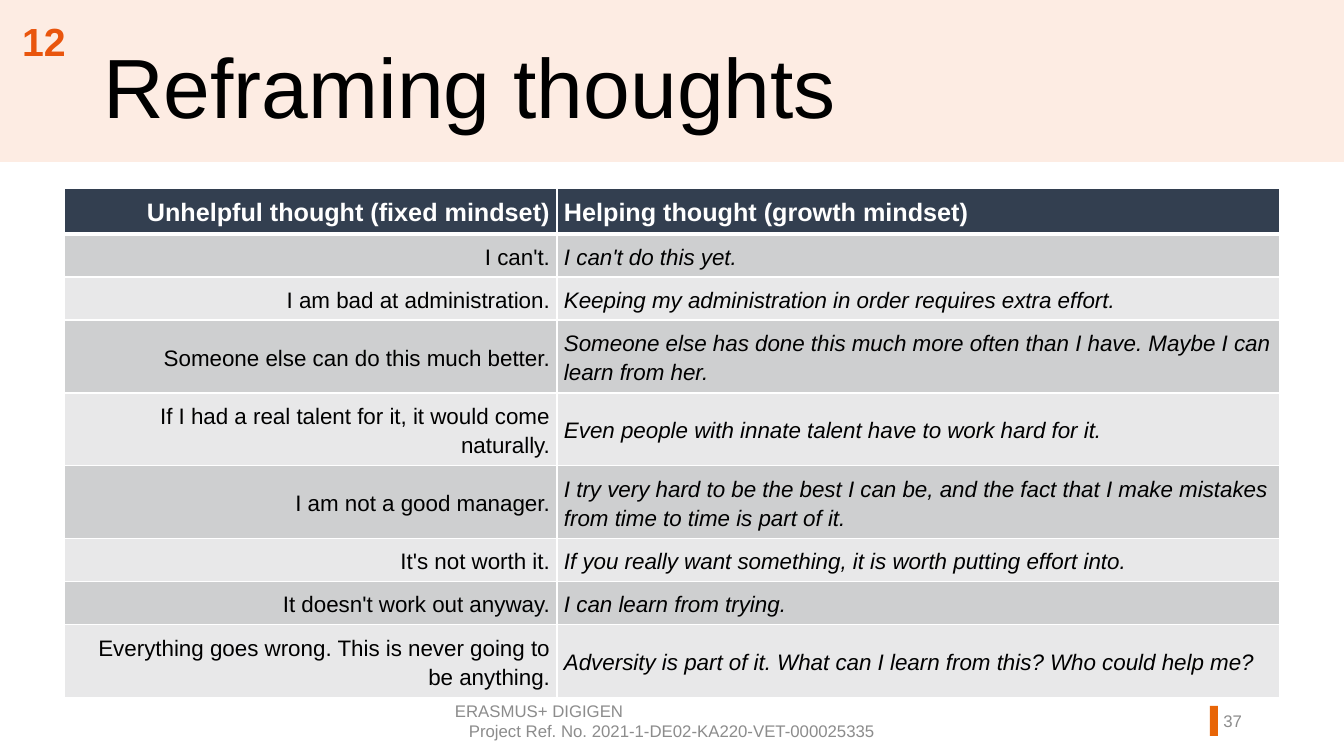
from dataclasses import dataclass

from lxml.etree import SubElement
from pptx import Presentation
from pptx.dml.color import RGBColor
from pptx.enum.shapes import MSO_SHAPE
from pptx.enum.text import MSO_ANCHOR as Anchor, MSO_AUTO_SIZE as AutoSize, PP_ALIGN as Align
from pptx.oxml.ns import qn
from pptx.slide import Slide
from pptx.table import _Cell as Cell
from pptx.text.text import TextFrame, _Paragraph as Paragraph
from pptx.util import Emu, Pt


@dataclass(frozen=True)
class Theme:
    font: str = "Arial"
    band: str = "FDECE3"
    accent: str = "E86507"
    chapter: str = "E9550D"
    header: str = "333F50"
    dark_row: str = "CECFD0"
    light_row: str = "E8E8E9"
    white: str = "FFFFFF"
    black: str = "000000"
    muted: str = "8C8C8C"
    title_size: int = 60
    chapter_size: int = 28
    header_size: int = 18
    body_size: int = 16
    footer_size: int = 12


@dataclass(frozen=True)
class Area:
    left: int
    top: int
    width: int
    height: int

    def emu(self) -> tuple[Emu, Emu, Emu, Emu]:
        return px(self.left), px(self.top), px(self.width), px(self.height)


@dataclass(frozen=True)
class Style:
    size: int
    color: str
    bold: bool = False
    italic: bool = False


@dataclass(frozen=True)
class Bar:
    area: Area
    color: str


@dataclass(frozen=True)
class Label:
    area: Area
    lines: tuple[str, ...]
    aligns: tuple[Align, ...]
    style: Style
    anchor: Anchor = Anchor.MIDDLE


@dataclass(frozen=True)
class Reframe:
    unhelpful: str
    helping: str
    height: int


THEME = Theme()
EMU_PER_PX = 914400 / 100.8
HEADER_ROW, ONE_LINE, TWO_LINES = 46, 43, 73
TABLE_LEFT, TABLE_TOP = 64, 188
COLUMN_WIDTHS = (493, 723)

BARS = (
    Bar(Area(0, 0, 1344, 162), THEME.band),
    Bar(Area(1210, 706, 8, 30), THEME.accent),
)
FOOTER_STYLE = Style(THEME.footer_size, THEME.muted)
LABELS = (
    Label(Area(445, 701, 454, 40),
          ("ERASMUS+ DIGIGEN", "Project Ref. No. 2021-1-DE02-KA220-VET-000025335"),
          (Align.LEFT, Align.CENTER), FOOTER_STYLE),
    Label(Area(1186, 701, 66, 40), ("37",), (Align.RIGHT,), FOOTER_STYLE),
    Label(Area(9, 12, 70, 57), ("12",), (Align.CENTER,),
          Style(THEME.chapter_size, THEME.chapter, bold=True), Anchor.TOP),
)
REFRAMES = (
    Reframe("Unhelpful thought (fixed mindset)", "Helping thought (growth mindset)", HEADER_ROW),
    Reframe("I can't.", "I can't do this yet.", ONE_LINE),
    Reframe("I am bad at administration.",
            "Keeping my administration in order requires extra effort.", ONE_LINE),
    Reframe("Someone else can do this much better.",
            "Someone else has done this much more often than I have. "
            "Maybe I can learn from her.", TWO_LINES),
    Reframe("If I had a real talent for it, it would come naturally.",
            "Even people with innate talent have to work hard for it.", TWO_LINES),
    Reframe("I am not a good manager.",
            "I try very hard to be the best I can be, and the fact that I make mistakes "
            "from time to time is part of it.", TWO_LINES),
    Reframe("It's not worth it.",
            "If you really want something, it is worth putting effort into.", ONE_LINE),
    Reframe("It doesn't work out anyway.", "I can learn from trying.", ONE_LINE),
    Reframe("Everything goes wrong. This is never going to be anything.",
            "Adversity is part of it. What can I learn from this? Who could help me?", TWO_LINES),
)


def px(length: int) -> Emu:
    return Emu(round(length * EMU_PER_PX))


def rgb(color: str) -> RGBColor:
    return RGBColor.from_string(color)


def style_para(para: Paragraph, style: Style, align: Align) -> None:
    para.alignment = align
    for span in para.runs:
        span.font.name = THEME.font
        span.font.size = Pt(style.size)
        span.font.bold = style.bold
        span.font.italic = style.italic
        span.font.color.rgb = rgb(style.color)


def add_bar(page: Slide, bar: Bar) -> None:
    shape = page.shapes.add_shape(MSO_SHAPE.RECTANGLE, *bar.area.emu())
    shape.shadow.inherit = False
    shape.fill.solid()
    shape.fill.fore_color.rgb = rgb(bar.color)
    shape.line.fill.background()


def add_label(page: Slide, label: Label) -> None:
    frame: TextFrame = page.shapes.add_textbox(*label.area.emu()).text_frame
    frame.word_wrap = True
    frame.vertical_anchor = label.anchor
    frame.text = "\n".join(label.lines)
    for para, align in zip(frame.paragraphs, label.aligns):
        style_para(para, label.style, align)


def set_title(page: Slide, text: str) -> None:
    title = page.shapes.title
    title.left, title.top, title.width, title.height = Area(93, 41, 1001, 86).emu()
    frame = title.text_frame
    frame.text = text
    frame.auto_size = AutoSize.NONE
    frame.vertical_anchor = Anchor.TOP
    para = frame.paragraphs[0]
    para.line_spacing = 0.9
    style_para(para, Style(THEME.title_size, THEME.black), Align.LEFT)


def add_borders(cell: Cell, top: int, bottom: int) -> None:
    """Draw white cell borders; they must precede the fill in the cell's XML."""
    properties = cell._tc.get_or_add_tcPr()
    for side, points in (("L", 1), ("R", 1), ("T", top), ("B", bottom)):
        line = SubElement(properties, qn(f"a:ln{side}"), w=str(Pt(points)))
        fill = SubElement(line, qn("a:solidFill"))
        SubElement(fill, qn("a:srgbClr"), val=THEME.white)


def fill_cell(cell: Cell, text: str, row: int, column: int) -> None:
    is_header = row == 0
    add_borders(cell, 3 if row == 1 else 1, 3 if is_header else 1)
    cell.fill.solid()
    row_color = THEME.dark_row if row % 2 else THEME.light_row
    cell.fill.fore_color.rgb = rgb(THEME.header if is_header else row_color)
    cell.margin_left = cell.margin_right = px(7)
    cell.margin_top = cell.margin_bottom = px(6)
    cell.vertical_anchor = Anchor.TOP if is_header else Anchor.MIDDLE
    cell.text = text
    if is_header:
        style = Style(THEME.header_size, THEME.white, bold=True)
    else:
        style = Style(THEME.body_size, THEME.black, italic=column == 1)
    para = cell.text_frame.paragraphs[0]
    para.line_spacing = 1.15
    style_para(para, style, Align.LEFT if column else Align.RIGHT)


def add_thought_table(page: Slide) -> None:
    height = sum(reframe.height for reframe in REFRAMES)
    area = Area(TABLE_LEFT, TABLE_TOP, sum(COLUMN_WIDTHS), height)
    table = page.shapes.add_table(len(REFRAMES), len(COLUMN_WIDTHS), *area.emu()).table
    for column, width in zip(table.columns, COLUMN_WIDTHS):
        column.width = px(width)
    for row, reframe in enumerate(REFRAMES):
        table.rows[row].height = px(reframe.height)
        for column, text in enumerate((reframe.unhelpful, reframe.helping)):
            fill_cell(table.cell(row, column), text, row, column)


def main() -> None:
    deck = Presentation()
    deck.slide_width, deck.slide_height = px(1344), px(756)
    page = deck.slides.add_slide(deck.slide_layouts.get_by_name("Title Only"))
    for bar in BARS:
        add_bar(page, bar)
    title_element = page.shapes.title._element
    title_element.getparent().append(title_element)
    set_title(page, "Reframing thoughts")
    add_thought_table(page)
    for label in LABELS:
        add_label(page, label)
    deck.save("out.pptx")


if __name__ == "__main__":
    main()
